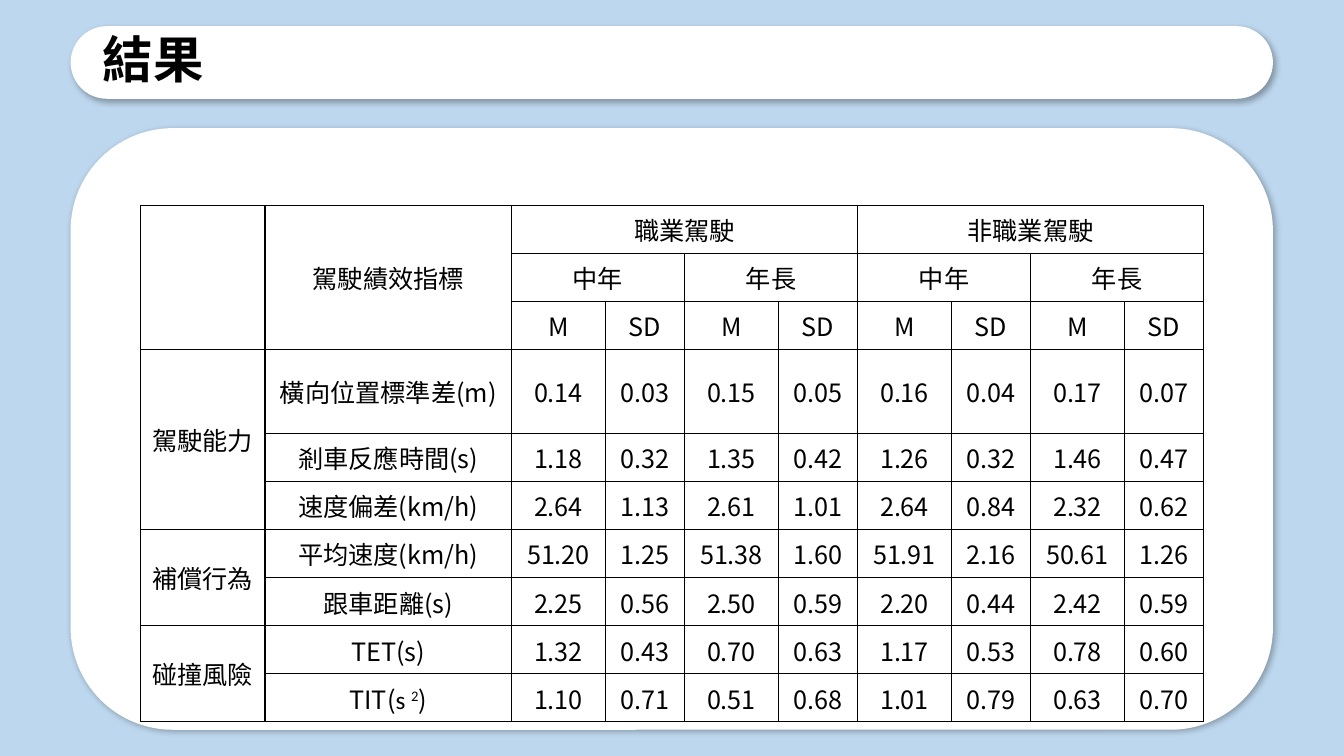
from lxml.etree import SubElement
from pptx import Presentation
from pptx.dml.color import RGBColor
from pptx.enum.shapes import MSO_SHAPE as Shape
from pptx.enum.text import MSO_ANCHOR as Anchor, PP_ALIGN as Align
from pptx.oxml import parse_xml
from pptx.oxml.ns import nsdecls, qn
from pptx.util import Cm, Pt

CJK = "Noto Sans CJK SC"
LATIN = "Calibri"
BLACK = "000000"
WHITE = "FFFFFF"
SKY = "BDD7EE"

COLUMN_WIDTHS = [3.14, 6.21] + [2.37, 1.99] * 4
ROW_HEIGHT = 1.21
TALL_ROW_HEIGHT = 2.12
SIDE_MARGIN = 0.28
MEASURE_MARGIN = 0.36
HEADER_ROWS = 3

GROUPS = {
    "駕駛能力": [
        (["橫向位置標準差(m)"], "0.14 0.03 0.15 0.05 0.16 0.04 0.17 0.07"),
        (["剎車反應時間(s)"], "1.18 0.32 1.35 0.42 1.26 0.32 1.46 0.47"),
        (["速度偏差(km/h)"], "2.64 1.13 2.61 1.01 2.64 0.84 2.32 0.62"),
    ],
    "補償行為": [
        (["平均速度(km/h)"], "51.20 1.25 51.38 1.60 51.91 2.16 50.61 1.26"),
        (["跟車距離(s)"], "2.25 0.56 2.50 0.59 2.20 0.44 2.42 0.59"),
    ],
    "碰撞風險": [
        (["TET(s)"], "1.32 0.43 0.70 0.63 1.17 0.53 0.78 0.60"),
        (["TIT(", ("s ", LATIN, 0), ("2", LATIN, 30000), ")"],
         "1.10 0.71 0.51 0.68 1.01 0.79 0.63 0.70"),
    ],
}


def color(hex_value):
    return RGBColor.from_string(hex_value)


def add_run(paragraph, text, size, font=CJK, baseline=0, bold=False):
    run = paragraph.add_run()
    run.text = text
    run.font.size = Pt(size)
    run.font.bold = bold
    run.font.name = font
    run.font.color.rgb = color(BLACK)
    properties = run.font._element
    SubElement(properties, qn("a:ea")).set("typeface", font)
    if baseline:
        properties.set("baseline", str(baseline))


def add_card(slide, top, height, corner):
    card = slide.shapes.add_shape(
        Shape.ROUNDED_RECTANGLE, Cm(1.78), Cm(top), Cm(30.3), Cm(height))
    card.adjustments[0] = corner
    card.fill.solid()
    card.fill.fore_color.rgb = color(WHITE)
    card.line.fill.background()
    card.shadow.inherit = False
    effects = card._element.spPr.find(qn("a:effectLst"))
    effects.append(parse_xml(
        f'<a:outerShdw {nsdecls("a")} blurRad="{Pt(4.5)}" dist="{Pt(2.6)}" '
        f'dir="{53 * 60000}" algn="tl" rotWithShape="0">'
        f'<a:srgbClr val="{BLACK}"><a:alpha val="30000"/></a:srgbClr>'
        '</a:outerShdw>'))


def add_title(slide, text):
    title = slide.shapes.add_textbox(Cm(2.34), Cm(0.66), Cm(29.21), Cm(1.83))
    frame = title.text_frame
    frame.word_wrap = True
    frame.vertical_anchor = Anchor.MIDDLE
    paragraph = frame.paragraphs[0]
    paragraph.line_spacing = 0.9
    add_run(paragraph, text, 36, bold=True)


def style_cell(cell):
    cell.vertical_anchor = Anchor.MIDDLE
    cell.margin_left = cell.margin_right = Cm(SIDE_MARGIN)
    cell.margin_top = cell.margin_bottom = Cm(0.15)
    properties = cell._tc.get_or_add_tcPr()
    for side in ("lnL", "lnR", "lnT", "lnB"):
        border = SubElement(properties, qn(f"a:{side}"), w=str(Pt(1)))
        border_fill = SubElement(border, qn("a:solidFill"))
        SubElement(border_fill, qn("a:srgbClr"), val=BLACK)
    cell.fill.solid()
    cell.fill.fore_color.rgb = color(WHITE)


def write_cell(table, row, column, parts, rows=1, columns=1):
    cell = table.cell(row, column)
    if rows * columns > 1:
        cell.merge(table.cell(row + rows - 1, column + columns - 1))
    paragraph = cell.text_frame.paragraphs[0]
    paragraph.alignment = Align.CENTER
    for part in parts:
        text, font, baseline = (part, CJK, 0) if isinstance(part, str) else part
        add_run(paragraph, text, 18, font, baseline)
    return cell


def write_header(table):
    write_cell(table, 0, 0, [], rows=HEADER_ROWS)
    write_cell(table, 0, 1, ["駕駛績效指標"], rows=HEADER_ROWS)
    levels = [["職業駕駛", "非職業駕駛"], ["中年", "年長"] * 2, ["M", "SD"] * 4]
    for row, labels in enumerate(levels):
        span = 8 // len(labels)
        for index, label in enumerate(labels):
            write_cell(table, row, 2 + index * span, [label], columns=span)


def write_groups(table):
    row = HEADER_ROWS
    for group, measures in GROUPS.items():
        write_cell(table, row, 0, [group], rows=len(measures))
        for measure, values in measures:
            measure_cell = write_cell(table, row, 1, measure)
            measure_cell.margin_left = measure_cell.margin_right = Cm(MEASURE_MARGIN)
            for column, value in enumerate(values.split(), start=2):
                write_cell(table, row, column, [value])
            row += 1


def add_results(slide):
    heights = [ROW_HEIGHT] * (HEADER_ROWS + sum(map(len, GROUPS.values())))
    heights[HEADER_ROWS] = TALL_ROW_HEIGHT
    table = slide.shapes.add_table(
        len(heights), len(COLUMN_WIDTHS), Cm(3.54), Cm(5.18),
        Cm(sum(COLUMN_WIDTHS)), Cm(sum(heights))).table
    table.first_row = False
    table.horz_banding = False
    for column, width in zip(table.columns, COLUMN_WIDTHS):
        column.width = Cm(width)
    for row, height in zip(table.rows, heights):
        row.height = Cm(height)
    for cell in table.iter_cells():
        style_cell(cell)
    write_header(table)
    write_groups(table)


def main():
    deck = Presentation()
    deck.slide_width = Cm(33.87)
    deck.slide_height = Cm(19.05)
    slide = deck.slides.add_slide(deck.slide_layouts[6])
    slide.background.fill.solid()
    slide.background.fill.fore_color.rgb = color(SKY)
    add_card(slide, top=3.23, height=15.16, corner=0.17)
    add_card(slide, top=0.66, height=1.83, corner=0.5)
    add_title(slide, "結果")
    add_results(slide)
    deck.save("out.pptx")


if __name__ == "__main__":
    main()
